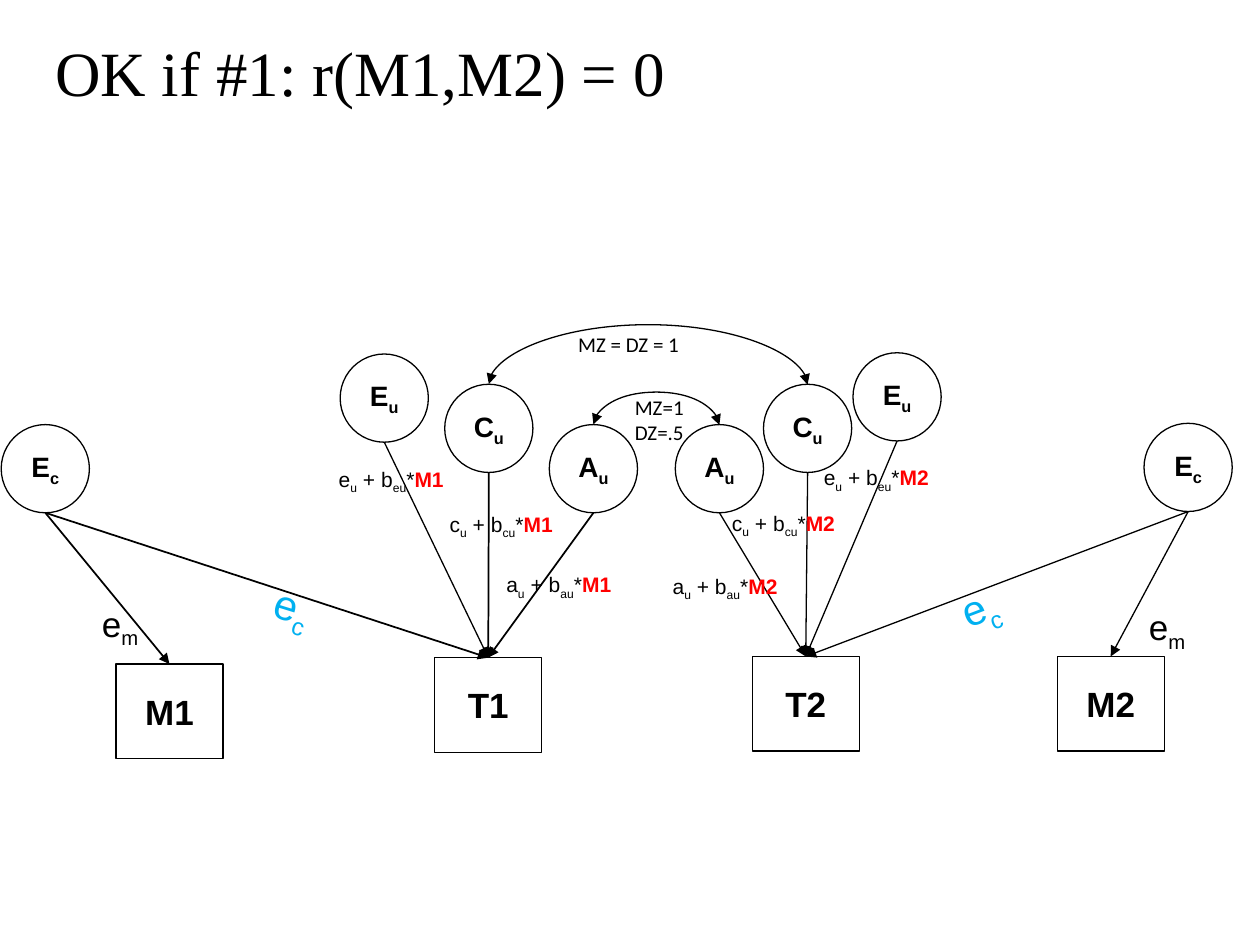
from lxml.etree import SubElement
from pptx import Presentation
from pptx.dml.color import RGBColor
from pptx.enum.shapes import MSO_CONNECTOR, MSO_SHAPE
from pptx.enum.text import MSO_ANCHOR, MSO_AUTO_SIZE, PP_ALIGN
from pptx.oxml.ns import qn
from pptx.util import Inches, Pt

BLACK, WHITE, RED, BLUE = "000000", "FFFFFF", "FF0000", "00B0F0"
CIRCLE = 0.7
BOX_WIDTH, BOX_HEIGHT = 0.85, 0.75

VARIABLES = {
    "M1": (0.92, 5.27),
    "T1": (3.45, 5.22),
    "T2": (5.97, 5.21),
    "M2": (8.39, 5.21),
}
# name: (text, left, top, [(variable, line width)])
FACTORS = [
    ("E~u", 2.7, 2.81, [("T1", 0.75)]),
    ("E~c", 0.01, 3.37, [("T1", 1), ("M1", 1)]),
    ("C~u", 3.53, 3.05, [("T1", 1)]),
    ("A~u", 4.36, 3.37, [("T1", 1)]),
    ("A~u", 5.36, 3.37, [("T2", 0.75)]),
    ("C~u", 6.06, 3.05, [("T2", 0.75)]),
    ("E~u", 6.77, 2.8, [("T2", 0.75)]),
    ("E~c", 9.08, 3.36, [("M2", 0.75), ("T2", 0.75)]),
]
MODERATIONS = [
    ("a", "M1", 3.92, 4.49, 1.07),
    ("c", "M1", 3.47, 4.01, 1.05),
    ("e", "M1", 2.59, 3.65, 1.07),
    ("e", "M2", 6.44, 3.64, 1.07),
    ("c", "M2", 5.71, 4.0, 1.05),
    ("a", "M2", 5.24, 4.5, 1.07),
]
LABELS = [
    ("e~c", (2.08, 4.57, 0.55, 0.51), dict(size=24, color=BLUE, rotation=17.1)),
    ("e~c", (7.53, 4.56, 0.5, 0.51), dict(size=24, color=BLUE, rotation=339.2)),
    ("e~m", (0.71, 4.73, 0.51, 0.44), dict(size=20)),
    ("e~m", (9.02, 4.76, 0.51, 0.44), dict(size=20)),
    ("MZ=1\nDZ=.5", (4.94, 3.08, 0.63, 0.5), dict(font="Calibri")),
    ("MZ = DZ = 1", (4.49, 2.58, 1.01, 0.3), dict(font="Calibri")),
    ("OK if #1: r(M1,M2) = 0", (0.34, 0.22, 5.09, 0.71),
     dict(size=36, font="Times New Roman")),
]
# left end, right end, height of ends, rise
CORRELATIONS = [(4.71, 5.71, 3.37, 0.25), (3.88, 6.41, 3.05, 0.46)]


def rgb(color):
    return RGBColor.from_string(color)


def add_span(para, text, size, font, color, bold, lowered):
    span = para.add_run()
    span.text = text
    span.font.size, span.font.name, span.font.bold = Pt(size), font, bold
    span.font.color.rgb = rgb(color)
    if lowered:
        span.font._element.set("baseline", "-25000")


def write(frame, text, size=12, font="Arial", color=BLACK, bold=False,
          align=PP_ALIGN.LEFT, accent=""):
    frame.word_wrap = False
    for number, line in enumerate(text.split("\n")):
        para = frame.paragraphs[0] if number == 0 else frame.add_paragraph()
        para.alignment = align
        for index, part in enumerate(line.split("~")):
            add_span(para, part, size, font, color, bold, index % 2 == 1)
    if accent:
        add_span(para, accent, size, font, RED, True, False)


def add_label(page, text, place, rotation=0, **style):
    box = page.shapes.add_textbox(*map(Inches, place))
    box.rotation = rotation
    write(box.text_frame, text, **style)
    box.text_frame.auto_size = MSO_AUTO_SIZE.SHAPE_TO_FIT_TEXT


def add_node(page, kind, text, place, size):
    node = page.shapes.add_shape(kind, *map(Inches, place))
    node.shadow.inherit = False
    node.fill.solid()
    node.fill.fore_color.rgb = rgb(WHITE)
    node.line.color.rgb = rgb(BLACK)
    node.line.width = Pt(0.75)
    node.text_frame.vertical_anchor = MSO_ANCHOR.MIDDLE
    write(node.text_frame, text, size=size, bold=True, align=PP_ALIGN.CENTER)
    return node


def add_arrow(page, kind, start, end, width=0.75, ends=("tailEnd",)):
    arrow = page.shapes.add_connector(kind, *map(Inches, start + end))
    arrow.line.color.rgb = rgb(BLACK)
    arrow.line.width = Pt(width)
    for name in ends:
        SubElement(arrow.line._get_or_add_ln(), qn("a:" + name), type="triangle")
    SubElement(arrow._element.spPr, qn("a:effectLst"))
    return arrow


def add_arc(page, left, right, base, rise):
    depth = 0.005
    middle, half = (left + right) / 2, (right - left) / 2
    arc = add_arrow(page, MSO_CONNECTOR.CURVE,
                    (middle - depth / 2, base - half),
                    (middle + depth / 2, base + half), ends=("headEnd", "tailEnd"))
    frame = arc._element.spPr.find(qn("a:xfrm"))
    frame.set("rot", str(90 * 60000))
    frame.set("flipV", "1")
    guides = arc._element.spPr.find(qn("a:prstGeom")).find(qn("a:avLst"))
    SubElement(guides, qn("a:gd"), name="adj1",
               fmla=f"val {round(-rise / depth * 100000)}")


def main():
    deck = Presentation()
    deck.slide_width, deck.slide_height = Inches(10), Inches(7.5)
    page = deck.slides.add_slide(deck.slide_layouts[6])

    boxes = {name: add_node(page, MSO_SHAPE.RECTANGLE, name,
                            (left, top, BOX_WIDTH, BOX_HEIGHT), 20)
             for name, (left, top) in VARIABLES.items()}
    for text, left, top, _ in FACTORS:
        add_node(page, MSO_SHAPE.OVAL, text, (left, top, CIRCLE, CIRCLE), 16)
    for _, left, top, paths in FACTORS:
        for name, width in paths:
            target_left, target_top = VARIABLES[name]
            arrow = add_arrow(page, MSO_CONNECTOR.STRAIGHT,
                              (left + CIRCLE / 2, top + CIRCLE),
                              (target_left + BOX_WIDTH / 2, target_top), width)
            arrow.end_connect(boxes[name], 0)
    for correlation in CORRELATIONS:
        add_arc(page, *correlation)
    for letter, moderator, left, top, width in MODERATIONS:
        add_label(page, f"{letter}~u~ + b~{letter}u~*", (left, top, width, 0.3),
                  accent=moderator)
    for text, place, style in LABELS:
        add_label(page, text, place, **style)

    deck.save("out.pptx")


if __name__ == "__main__":
    main()
